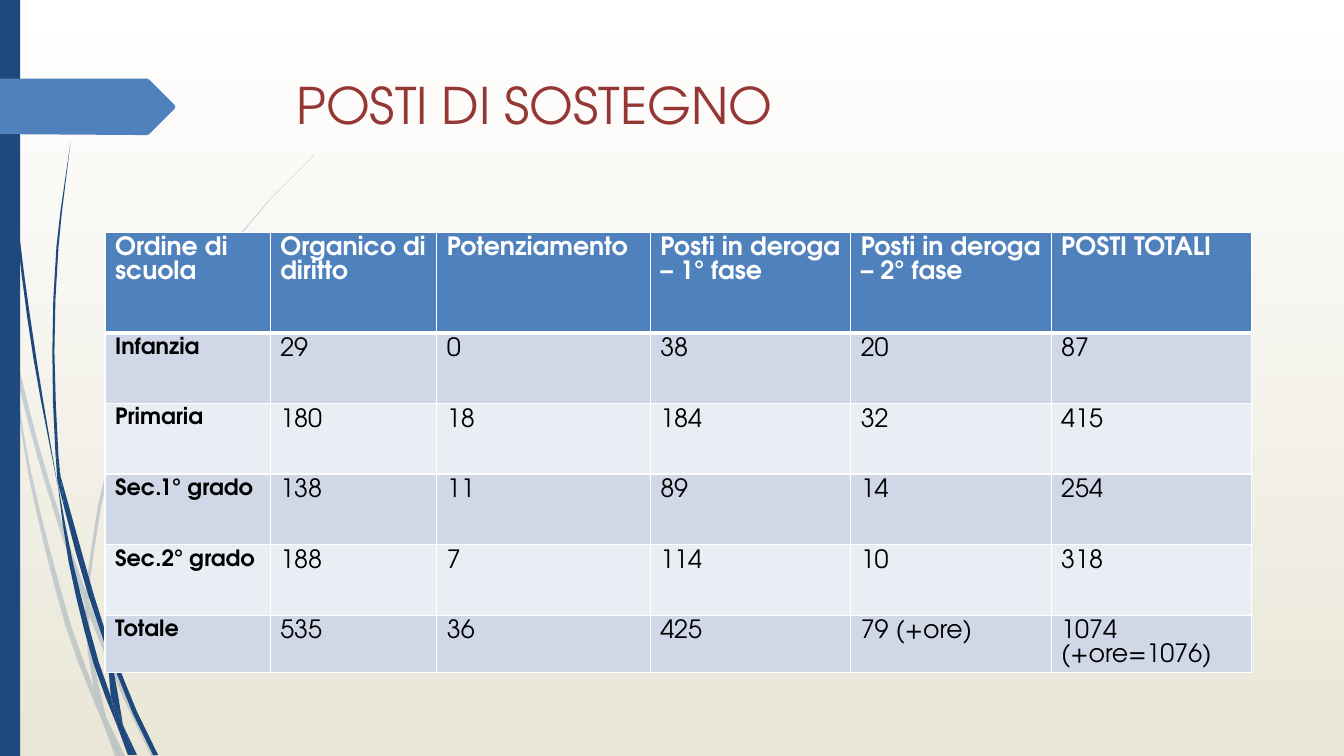
import math

import pptx
import pptx.dml.color
import pptx.enum.shapes
import pptx.enum.text
import pptx.oxml
import pptx.oxml.ns
import pptx.util

Pt = pptx.util.Pt
FONT = "TeX Gyre Adventor"
COLORS = {
    "navy": "1F497D", "blue": "4F81BD", "title": "953735", "white": "FFFFFF", "black": "000000",
    "sand": "EAE7D8", "band_dark": "D0D8E8", "band_light": "E9EDF4",
}

# Each blade has two edges, listed from top to bottom, in points
PALE_BLADES = [
    ([(0, 203), (7.9, 252)], [(0, 215.3), (7.9, 252)]),
    ([(10.1, 248.4), (26, 311.8), (44.6, 374.4), (61.2, 421.9)],
     [(12.2, 270.7), (25.9, 323.6), (41.8, 375.8), (60.5, 431.3)]),
    ([(63.4, 429.1), (91.4, 498.2), (111.6, 540)], [(63.4, 439.2), (88.6, 499.7), (108, 540)]),
    ([(75.6, 511.9), (89.3, 540)], [(75.6, 511.9), (85.7, 540)]),
    ([(7.9, 252), (20.2, 338.4), (46.8, 447.1), (66.2, 499), (72.7, 514.1)],
     [(7.9, 252), (22.3, 337.7), (50.4, 445.7), (67, 491.8), (72.7, 514.1)]),
    ([(60.5, 431.3), (62.6, 465.1), (67, 491.8), (75.6, 511.9)],
     [(60.5, 431.3), (63.4, 439.2), (65.5, 465.1), (75.6, 511.9)]),
    ([(224.6, 110.2), (193, 141.8), (164.2, 175.7), (113.8, 250.6),
      (77, 331.9), (61.2, 421.9), (63.4, 429.1)],
     [(224.6, 110.9), (193, 142.6), (164.9, 176.4), (115.2, 251.3),
      (79.2, 332.6), (63.4, 420.5), (63.4, 429.1)]),
    ([(72.7, 514.1), (82.1, 540)], [(72.7, 514.1), (85.7, 540)]),
    ([(61.2, 421.9), (60.5, 431.3), (63.4, 439.2)], [(61.2, 421.9), (63.4, 429.1), (63.4, 439.2)]),
    ([(67, 491.8), (72.7, 514.1), (85.7, 540)], [(67, 491.8), (75.6, 511.9), (85.7, 540)]),
]
NAVY_BLADES = [
    ([(2.2, 0), (5, 79.2), (12.2, 167.8), (23.8, 255.6), (41, 346.3)],
     [(2.9, 0), (5.8, 78.5), (13.7, 167), (25.9, 255.6), (41, 346.3)]),
    ([(43.2, 339.8), (46.1, 363.6), (63.4, 426.2), (76.3, 464.4)],
     [(43.2, 339.8), (67, 424.8), (76.3, 454.3), (76.3, 464.4)]),
    ([(79.2, 461.5), (79.9, 472.3), (95, 509.8), (109.4, 539.3)],
     [(79.2, 461.5), (97.9, 508.3), (113, 539.3)]),
    ([(41, 343.4), (49, 401), (67, 474.5), (84.2, 519.8)],
     [(41, 343.4), (51.8, 400.3), (70.6, 473), (79.2, 497.5), (84.2, 519.8)]),
    ([(50.4, 101.5), (40.3, 176.4), (37.4, 251.3), (39.6, 323.3), (43.2, 339.8)],
     [(50.4, 101.5), (41.8, 176.4), (38.9, 251.3), (41.8, 326.2), (43.2, 339.8)]),
    ([(87.8, 517.7), (95.8, 539.3)], [(87.8, 517.7), (97.9, 539.3)]),
    ([(39.6, 323.3), (41, 343.4), (46.1, 363.6)], [(39.6, 323.3), (43.2, 339.8), (46.1, 363.6)]),
    ([(187.2, 247.7), (166.3, 268.6), (146.9, 291.6), (112.3, 341.3),
      (87.8, 396.7), (76.3, 454.3), (79.2, 461.5)],
     [(187.2, 247.7), (166.3, 269.3), (147.6, 292.3), (113.8, 342.7),
      (90, 397.4), (79.9, 455.8), (79.2, 461.5)]),
    ([(84.2, 519.8), (91.4, 539.3)], [(84.2, 519.8), (94.3, 539.3)]),
    ([(76.3, 464.4), (79.2, 497.5), (87.8, 517.7)], [(76.3, 464.4), (79.9, 472.3), (87.8, 517.7)]),
    ([(76.3, 454.3), (76.3, 464.4), (79.9, 472.3)], [(76.3, 454.3), (79.2, 461.5), (79.9, 472.3)]),
    ([(79.2, 497.5), (84.2, 519.8), (93.6, 539.3)], [(79.2, 497.5), (87.8, 517.7), (95.8, 539.3)]),
]
ARROW = [(0, 56.2), (105.1, 56.2), (106.6, 56.9), (124.6, 74.9), (125.3, 76.3),
         (124.6, 77.8), (106.6, 95.8), (105.1, 96.5), (0, 95.8)]

POSTS = [
    ["Ordine di scuola", "Organico di diritto", "Potenziamento", "Posti in deroga – 1° fase",
     "Posti in deroga – 2° fase", "POSTI TOTALI"],
    ["Infanzia", "29", "0", "38", "20", "87"],
    ["Primaria", "180", "18", "184", "32", "415"],
    ["Sec.1° grado", "138", "11", "89", "14", "254"],
    ["Sec.2° grado", "188", "7", "114", "10", "318"],
    ["Totale", "535", "36", "425", "79 (+ore)", "1074 (+ore=1076)"],
]
COLUMN_WIDTHS = [118, 119, 152.5, 143.2, 143.2, 143.2]
ROW_HEIGHTS = [72, 50.4, 50.4, 50.4, 50.4, 34.6]


def rgb(name):
    return pptx.dml.color.RGBColor.from_string(COLORS[name])


def paint(shape, color, opacity=100):
    shape.shadow.inherit = False
    shape.fill.solid()
    shape.fill.fore_color.rgb = rgb(color)
    shape.line.fill.background()
    if opacity < 100:
        tint = next(shape.element.spPr.iter(pptx.oxml.ns.qn("a:srgbClr")))
        tint.append(pptx.oxml.parse_xml(
            f'<a:alpha {pptx.oxml.ns.nsdecls("a")} val="{opacity * 1000}"/>'))


def smooth_edge(knots, spacing=30):
    """Hermite curve through the knots, with a point about every spacing."""
    def direction(i):
        before, after = knots[max(i - 1, 0)], knots[min(i + 1, len(knots) - 1)]
        length = math.dist(before, after)
        return [(b - a) / length for a, b in zip(before, after)]

    curve = [knots[0]]
    for i, (start, end) in enumerate(zip(knots, knots[1:])):
        reach = math.dist(start, end)
        steps = max(1, round(reach / spacing))
        leave, arrive = direction(i), direction(i + 1)
        for t in (step / steps for step in range(1, steps + 1)):
            curve.append(tuple(
                (2 * t**3 - 3 * t**2 + 1) * start[k] + (3 * t**2 - 2 * t**3) * end[k]
                + reach * ((t**3 - 2 * t**2 + t) * leave[k] + (t**3 - t**2) * arrive[k])
                for k in (0, 1)))
    return curve


def add_outline(slide, points, color, opacity=100):
    corners = [(Pt(x), Pt(y)) for x, y in points]
    builder = slide.shapes.build_freeform(*corners[0], scale=1.0)
    builder.add_line_segments(corners[1:], close=True)
    paint(builder.convert_to_shape(), color, opacity)


def add_blades(slide, blades, opacity):
    for left_edge, right_edge in blades:
        outline = smooth_edge(left_edge) + smooth_edge(right_edge)[::-1]
        add_outline(slide, outline, "navy", opacity)


def add_run(paragraph, text, size, color, bold=False):
    run = paragraph.add_run()
    run.text = text
    run.font.name, run.font.size, run.font.bold = FONT, Pt(size), bold
    run.font.color.rgb = rgb(color)


def set_title(slide, text):
    title = slide.shapes.title
    title.left, title.top, title.width, title.height = Pt(204.5), Pt(49), Pt(702), Pt(100.8)
    title.text_frame.vertical_anchor = pptx.enum.text.MSO_ANCHOR.TOP
    heading = title.text_frame.paragraphs[0]
    heading.alignment = pptx.enum.text.PP_ALIGN.LEFT
    add_run(heading, text, 36, "title")


def set_borders(cell, widths):
    properties = cell._tc.get_or_add_tcPr()
    for side, width in zip("LRTB", widths):
        properties.append(pptx.oxml.parse_xml(
            f'<a:ln{side} {pptx.oxml.ns.nsdecls("a")} w="{Pt(width)}"><a:solidFill>'
            f'<a:srgbClr val="{COLORS["white"]}"/></a:solidFill></a:ln{side}>'))


def add_posts_table(slide):
    posts = slide.shapes.add_table(len(POSTS), len(POSTS[0]), Pt(75), Pt(165.8),
                                   Pt(sum(COLUMN_WIDTHS)), Pt(sum(ROW_HEIGHTS))).table
    for column, width in zip(posts.columns, COLUMN_WIDTHS):
        column.width = Pt(width)
    for r, (row, height) in enumerate(zip(POSTS, ROW_HEIGHTS)):
        posts.rows[r].height = Pt(height)
        header = r == 0
        band = "blue" if header else "band_dark" if r % 2 else "band_light"
        for c, text in enumerate(row):
            cell = posts.cell(r, c)
            school = c == 0 and not header
            set_borders(cell, [1, 1, 3 if r == 1 else 1, 3 if header else 1])
            cell.fill.solid()
            cell.fill.fore_color.rgb = rgb(band)
            add_run(cell.text_frame.paragraphs[0], text, 16 if school else 18,
                    "white" if header else "black", bold=header or school)


def set_background(slide):
    fill = slide.background.fill
    fill.gradient()
    fill.gradient_angle = 270
    for stop, position, color in zip(fill.gradient_stops, (0, 1), ("white", "sand")):
        stop.position = position
        stop.color.rgb = rgb(color)


def main():
    deck = pptx.Presentation()
    deck.slide_width, deck.slide_height = Pt(960), Pt(540)
    slide = deck.slides.add_slide(deck.slide_layouts[5])
    set_background(slide)

    # Decoration on the left
    add_blades(slide, PALE_BLADES, opacity=20)
    add_blades(slide, NAVY_BLADES, opacity=100)
    side_bar = slide.shapes.add_shape(
        pptx.enum.shapes.MSO_SHAPE.RECTANGLE, 0, 0, Pt(14.4), deck.slide_height)
    paint(side_bar, "navy")
    add_outline(slide, ARROW, "blue")

    # Content
    set_title(slide, "POSTI DI SOSTEGNO")
    add_posts_table(slide)
    deck.save("out.pptx")


if __name__ == "__main__":
    main()
